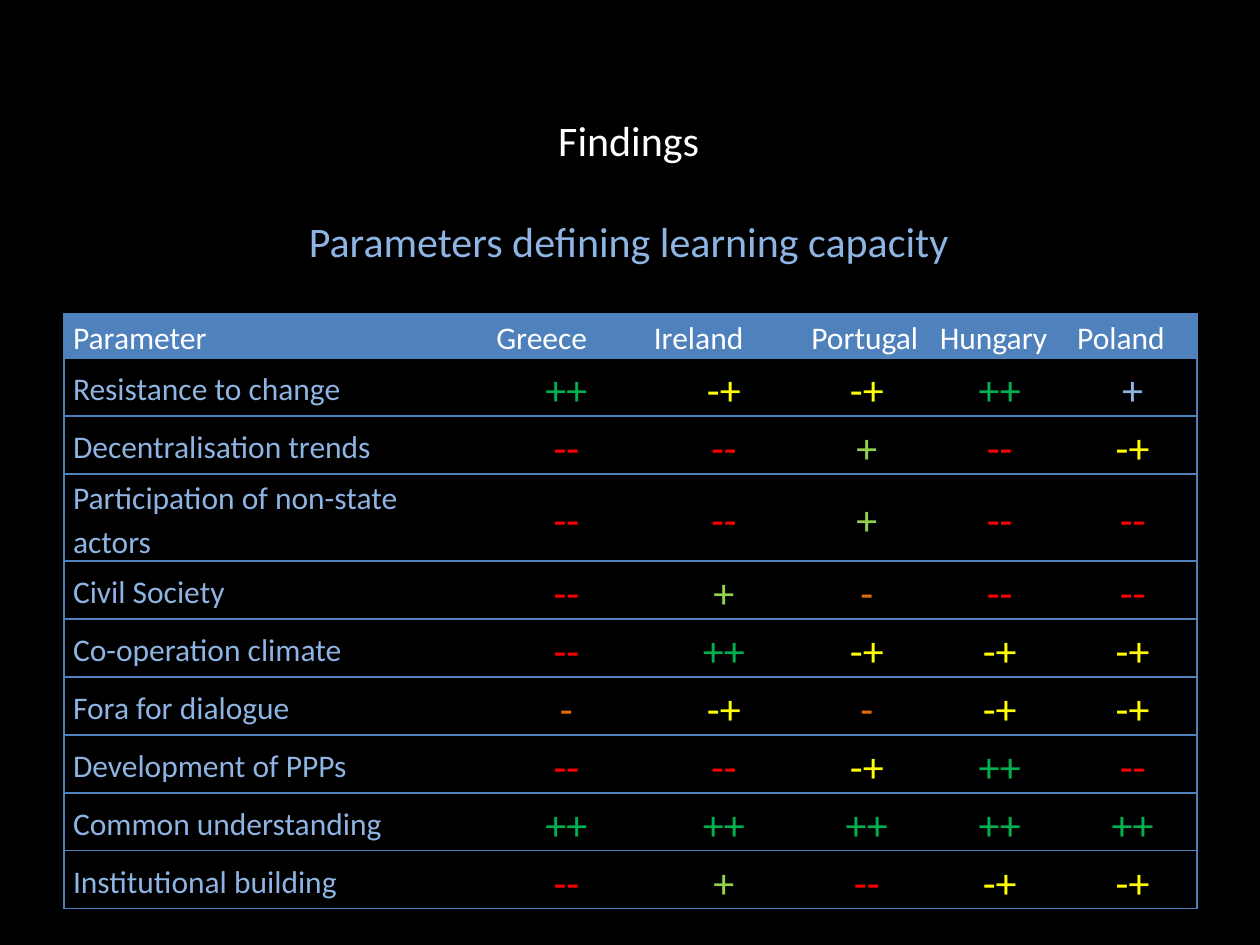
from lxml import etree
from pptx import Presentation
from pptx import util as u
from pptx.dml.color import RGBColor
from pptx.enum import text
from pptx.oxml import ns

BLACK = RGBColor(0x00, 0x00, 0x00)
WHITE = RGBColor(0xFF, 0xFF, 0xFF)
BLUE = RGBColor(0x4F, 0x81, 0xBD)
PALE_BLUE = RGBColor(0x8E, 0xB4, 0xE3)
GREEN = RGBColor(0x00, 0xB0, 0x50)
LIME = RGBColor(0x92, 0xD0, 0x50)
YELLOW = RGBColor(0xFF, 0xFF, 0x00)
ORANGE = RGBColor(0xE4, 0x6C, 0x0A)
RED = RGBColor(0xFF, 0x00, 0x00)

RATING_COLORS = {"++": GREEN, "+": LIME, "-+": YELLOW, "-": ORANGE, "--": RED}
COUNTRIES = ["Greece", "Ireland", "Portugal", "Hungary", "Poland"]
FINDINGS = [
    ("Resistance to change", "++ -+ -+ ++ +"),
    ("Decentralisation trends", "-- -- + -- -+"),
    ("Participation of non-state actors", "-- -- + -- --"),
    ("Civil Society", "-- + - -- --"),
    ("Co-operation climate", "-- ++ -+ -+ -+"),
    ("Fora for dialogue", "- -+ - -+ -+"),
    ("Development of PPPs", "-- -- -+ ++ --"),
    ("Common understanding", "++ ++ ++ ++ ++"),
    ("Institutional building", "-- + -- -+ -+"),
]
COLUMN_WIDTHS = [3.36, 1.25, 1.25, 1.02, 1.09, 1.02]
HEADER_HEIGHT, ROW_HEIGHT, TWO_LINE_HEIGHT = 0.35, 0.46, 0.69
PLAIN_TABLE_STYLE = "{2D5ABB26-0587-4C30-8999-92F81FD0307C}"


class FindingsSlide:
    font = "Calibri"
    label_size = 18
    large_size = 24

    def __init__(self, deck):
        self.slide = deck.slides.add_slide(deck.slide_layouts[6])
        background = self.slide.background.fill
        background.solid()
        background.fore_color.rgb = BLACK

    def run(self, paragraph, wording, size, color):
        run = paragraph.add_run()
        run.text = wording
        run.font.name = self.font
        run.font.size = u.Pt(size)
        run.font.color.rgb = color

    def heading(self, left, top, width, height, lines, gap):
        frame = self.slide.shapes.add_textbox(
            u.Inches(left), u.Inches(top), u.Inches(width), u.Inches(height)).text_frame
        frame.word_wrap = True
        for i, (wording, color) in enumerate(lines):
            paragraph = frame.add_paragraph() if i else frame.paragraphs[0]
            paragraph.alignment = text.PP_ALIGN.CENTER
            paragraph.space_before = u.Pt(gap if i else 0)
            self.run(paragraph, wording, self.large_size, color)

    def table(self, left, top, widths, heights):
        table = self.slide.shapes.add_table(
            len(heights), len(widths), u.Inches(left), u.Inches(top),
            u.Inches(sum(widths)), u.Inches(sum(heights))).table
        table.first_row = table.horz_banding = False
        table._tbl.tblPr.find(ns.qn("a:tableStyleId")).text = PLAIN_TABLE_STYLE
        for column, width in zip(table.columns, widths):
            column.width = u.Inches(width)
        for row, height in zip(table.rows, heights):
            row.height = u.Inches(height)
        return table

    def borders(self, cell, sides):
        for side in sides:
            line = etree.SubElement(
                cell._tc.get_or_add_tcPr(), ns.qn("a:ln" + side), w=str(u.Pt(1)))
            fill = etree.SubElement(line, ns.qn("a:solidFill"))
            etree.SubElement(fill, ns.qn("a:srgbClr"), val=str(BLUE))

    def cell(self, cell, wording, color, sides, size=label_size, centred=False, fill=None):
        self.borders(cell, sides)
        if fill is None:
            cell.fill.background()
        else:
            cell.fill.solid()
            cell.fill.fore_color.rgb = fill
        cell.margin_left = cell.margin_right = u.Inches(0.07)
        cell.margin_top = cell.margin_bottom = 0
        cell.vertical_anchor = text.MSO_ANCHOR.MIDDLE
        paragraph = cell.text_frame.paragraphs[0]
        paragraph.alignment = text.PP_ALIGN.CENTER if centred else text.PP_ALIGN.LEFT
        paragraph.line_spacing = 1.15
        paragraph.space_before = paragraph.space_after = u.Pt(3)
        self.run(paragraph, wording, size, color)


def main():
    deck = Presentation()
    deck.slide_width, deck.slide_height = u.Inches(10), u.Inches(7.5)
    page = FindingsSlide(deck)

    # Headings, one line apart
    page.heading(0.39, 0.86, 9.2, 1.31,
                 [("Findings", WHITE), ("Parameters defining learning capacity", PALE_BLUE)],
                 gap=29)

    # Ratings table: outer frame and row rules only
    heights = [HEADER_HEIGHT] + [
        TWO_LINE_HEIGHT if len(parameter) > 30 else ROW_HEIGHT for parameter, _ in FINDINGS]
    ratings_table = page.table(0.51, 2.49, COLUMN_WIDTHS, heights)
    edges = ["LTB"] + ["TB"] * (len(COUNTRIES) - 1) + ["RTB"]

    for c, title in enumerate(["Parameter"] + COUNTRIES):
        page.cell(ratings_table.cell(0, c), title, WHITE, edges[c], fill=BLUE)

    for r, (parameter, ratings) in enumerate(FINDINGS, start=1):
        page.cell(ratings_table.cell(r, 0), parameter, PALE_BLUE, edges[0])
        for c, rating in enumerate(ratings.split(), start=1):
            # Poland's resistance to change keeps the label colour
            color = PALE_BLUE if (r, c) == (1, 5) else RATING_COLORS[rating]
            page.cell(ratings_table.cell(r, c), rating, color, edges[c],
                      size=page.large_size, centred=True)

    deck.save("out.pptx")


if __name__ == "__main__":
    main()
